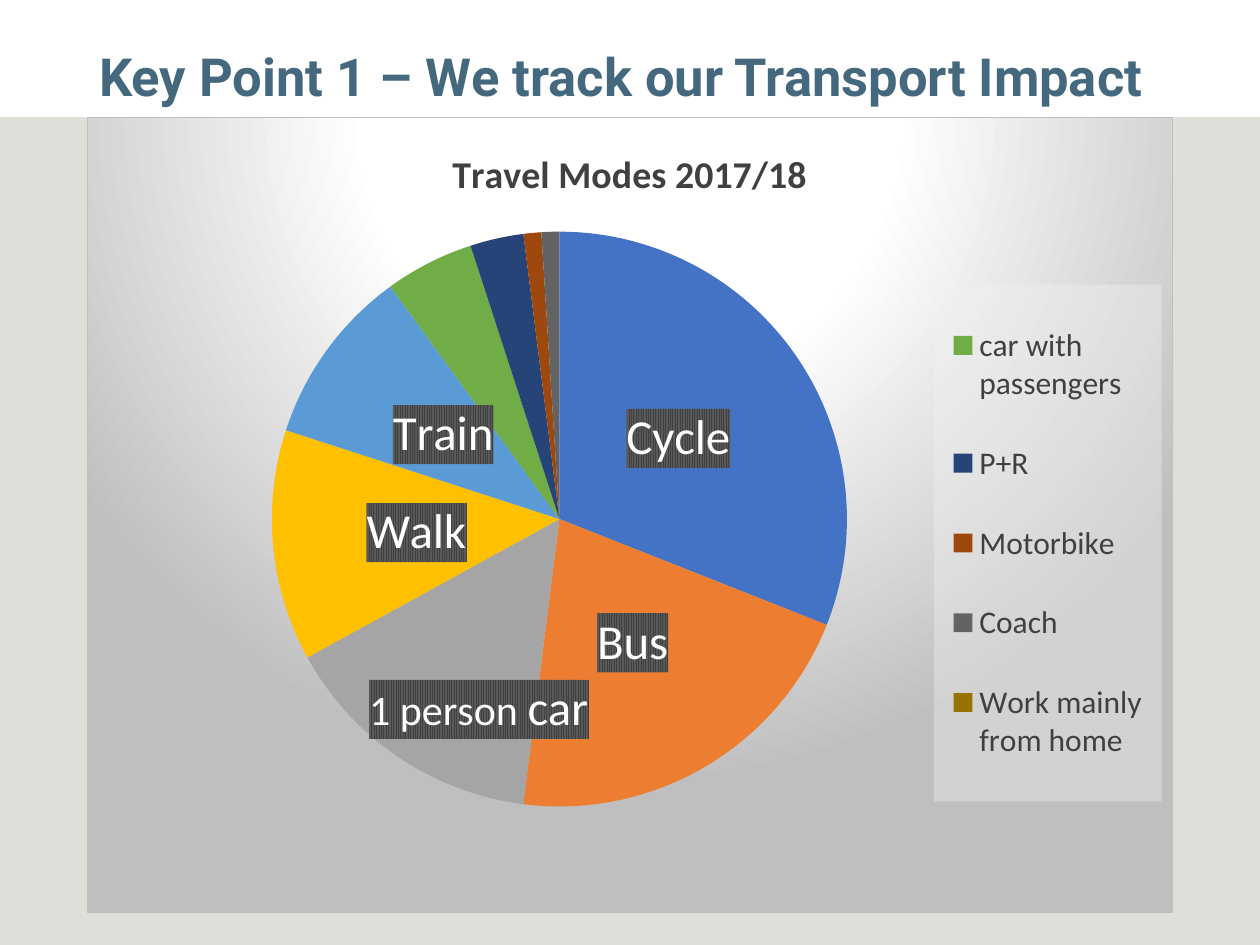
from lxml import etree
from pptx import Presentation
from pptx.chart.data import CategoryChartData
from pptx.dml.color import RGBColor
from pptx.enum.chart import XL_CHART_TYPE, XL_LABEL_POSITION, XL_LEGEND_POSITION
from pptx.enum.shapes import MSO_SHAPE
from pptx.enum.text import MSO_ANCHOR
from pptx.util import Cm, Pt

PIE = XL_CHART_TYPE.PIE
LABEL_CENTER = XL_LABEL_POSITION.CENTER
LEGEND_RIGHT = XL_LEGEND_POSITION.RIGHT
RECTANGLE = MSO_SHAPE.RECTANGLE
MIDDLE = MSO_ANCHOR.MIDDLE

WHITE = RGBColor(0xFF, 0xFF, 0xFF)
BLACK = RGBColor(0, 0, 0)
SAND = RGBColor(0xE0, 0xDE, 0xD9)
SLATE = RGBColor(0x44, 0x68, 0x7D)
CHARCOAL = RGBColor(0x40, 0x40, 0x40)
SILVER = RGBColor(0xBF, 0xBF, 0xBF)
PALE = RGBColor(0xF2, 0xF2, 0xF2)
GRAY = RGBColor(0x59, 0x59, 0x59)

HEADING = "Key Point 1 – We track our Transport Impact"
CHART_TITLE = "Travel Modes 2017/18"
MODES = [
    ("cycle", 31, RGBColor(0x44, 0x72, 0xC4), [("Cycle", 28)]),
    ("bus", 21, RGBColor(0xED, 0x7D, 0x31), [("Bus", 28)]),
    ("1 person car", 15, RGBColor(0xA5, 0xA5, 0xA5), [("1 person ", 24), ("car", 28)]),
    ("walk", 13, RGBColor(0xFF, 0xC0, 0x00), [("Walk", 28)]),
    ("train", 10, RGBColor(0x5B, 0x9B, 0xD5), [("Train", 28)]),
    ("car with passengers", 5, RGBColor(0x70, 0xAD, 0x47), []),
    ("P+R", 3, RGBColor(0x26, 0x44, 0x78), []),
    ("Motorbike", 1, RGBColor(0x9E, 0x48, 0x0E), []),
    ("Coach", 1, RGBColor(0x63, 0x63, 0x63), []),
    ("Work mainly from home", 0, RGBColor(0x99, 0x73, 0x00), []),
]
LABEL_SHIFTS = {"1 person car": (0, 0.09)}

SLIDE_W, SLIDE_H = Cm(25.4), Cm(19.05)
MARGIN, BAND_TOP = Cm(1.75), Cm(2.36)
CONTENT_W = SLIDE_W - 2 * MARGIN
PLOT_AREA = (0.17, 0.14, 0.53, 0.73)
LEGEND_AREA = (0.78, 0.21, 0.21, 0.65)

NAMESPACES = (
    'xmlns:c="http://schemas.openxmlformats.org/drawingml/2006/chart" '
    'xmlns:a="http://schemas.openxmlformats.org/drawingml/2006/main"'
)


def chart_xml(tag, content):
    return etree.fromstring(f"<c:{tag} {NAMESPACES}>{content}</c:{tag}>")


def area_layout(area, target=""):
    x, y, w, h = area
    return chart_xml("layout", (
        f'<c:manualLayout>{target}<c:xMode val="edge"/><c:yMode val="edge"/>'
        f'<c:x val="{x}"/><c:y val="{y}"/><c:w val="{w}"/><c:h val="{h}"/></c:manualLayout>'
    ))


def shift_layout(shift):
    x, y = shift
    return chart_xml("layout", f'<c:manualLayout><c:x val="{x}"/><c:y val="{y}"/></c:manualLayout>')


def set_layout(element, following, layout):
    for existing in element.xpath("./c:layout"):
        element.remove(existing)
    following.addprevious(layout)


def color_xml(color, inner=""):
    return f'<a:srgbClr val="{color}">{inner}</a:srgbClr>'


def add_text(paragraph, text, size, color, font="Calibri", bold=False):
    run = paragraph.add_run()
    run.text = text
    run.font.size = Pt(size)
    run.font.name = font
    run.font.bold = bold
    run.font.color.rgb = color


def add_heading(slide):
    band = slide.shapes.add_shape(RECTANGLE, 0, BAND_TOP, SLIDE_W, SLIDE_H - BAND_TOP)
    band.shadow.inherit = False
    band.fill.solid()
    band.fill.fore_color.rgb = SAND
    band.line.fill.background()
    heading = slide.shapes.add_textbox(MARGIN, Cm(0.86), CONTENT_W, Cm(1.48))
    frame = heading.text_frame
    frame.word_wrap = True
    frame.vertical_anchor = MIDDLE
    frame.paragraphs[0].line_spacing = 0.9
    add_text(frame.paragraphs[0], HEADING, size=30, color=SLATE, font="Roboto", bold=True)


def style_slices(series):
    label_fill = (
        f'<a:pattFill prst="narVert"><a:fgClr>{color_xml(CHARCOAL)}</a:fgClr>'
        f'<a:bgClr>{color_xml(GRAY)}</a:bgClr></a:pattFill><a:ln><a:noFill/></a:ln>'
    )
    series.data_labels.show_value = False
    for index, (mode, _, color, label_runs) in enumerate(MODES):
        point = series.points[index]
        point.format.fill.solid()
        point.format.fill.fore_color.rgb = color
        point.format.line.fill.background()
        if not label_runs:
            continue
        label = point.data_label
        for text, size in label_runs:
            add_text(label.text_frame.paragraphs[0], text, size=size, color=WHITE)
        label.position = LABEL_CENTER
        rich = series.data_labels._element.xpath(f"./c:dLbl[c:idx/@val='{index}']/c:tx")[0]
        rich.addnext(chart_xml("spPr", label_fill))
        if mode in LABEL_SHIFTS:
            rich.addprevious(shift_layout(LABEL_SHIFTS[mode]))


def style_legend(chart):
    chart.has_legend = True
    legend = chart.legend
    legend.position = LEGEND_RIGHT
    legend.include_in_layout = False
    legend.font.size = Pt(18)
    legend.font.name = "Calibri"
    legend.font.color.rgb = CHARCOAL
    element = legend._element
    overlay = element.xpath("./c:overlay")[0]
    set_layout(element, overlay, area_layout(LEGEND_AREA))
    layout = element.xpath("./c:layout")[0]
    for index, (_, _, _, label_runs) in enumerate(MODES):
        if label_runs:
            layout.addprevious(chart_xml("legendEntry", f'<c:idx val="{index}"/><c:delete val="1"/>'))
    translucent = color_xml(PALE, '<a:alpha val="39000"/>')
    overlay.addnext(chart_xml("spPr", f"<a:solidFill>{translucent}</a:solidFill><a:ln><a:noFill/></a:ln>"))


def style_background(chart):
    stops = "".join(
        f'<a:gs pos="{position * 1000}">{color_xml(color)}</a:gs>'
        for position, color in [(0, WHITE), (39, WHITE), (100, SILVER)]
    )
    chart._chartSpace.xpath("./c:chart")[0].addnext(chart_xml("spPr", (
        f'<a:gradFill><a:gsLst>{stops}</a:gsLst><a:path path="circle">'
        '<a:fillToRect l="50000" t="-80000" r="50000" b="180000"/></a:path></a:gradFill>'
        f'<a:ln w="9525"><a:solidFill>{color_xml(SILVER)}</a:solidFill></a:ln>'
    )))


def add_travel_chart(slide):
    data = CategoryChartData()
    data.categories = [mode for mode, _, _, _ in MODES]
    data.add_series("Series 1", [share for _, share, _, _ in MODES])
    chart = slide.shapes.add_chart(PIE, MARGIN, BAND_TOP, CONTENT_W, Cm(16.05), data).chart
    chart.font.size = Pt(10)
    chart.font.name = "Calibri"
    chart.font.color.rgb = BLACK
    chart.has_title = True
    title = chart.chart_title.text_frame.paragraphs[0]
    add_text(title, CHART_TITLE, size=21.6, color=CHARCOAL, bold=True)
    plot = chart.plots[0]
    plot.vary_by_categories = True
    plot_area = chart._chartSpace.xpath("./c:chart/c:plotArea")[0]
    pie = plot_area.xpath("./c:pieChart")[0]
    set_layout(plot_area, pie, area_layout(PLOT_AREA, '<c:layoutTarget val="inner"/>'))
    style_slices(plot.series[0])
    style_legend(chart)
    style_background(chart)


def main():
    presentation = Presentation()
    presentation.slide_width, presentation.slide_height = SLIDE_W, SLIDE_H
    slide = presentation.slides.add_slide(presentation.slide_layouts[6])
    add_heading(slide)
    add_travel_chart(slide)
    presentation.save("out.pptx")


if __name__ == "__main__":
    main()
